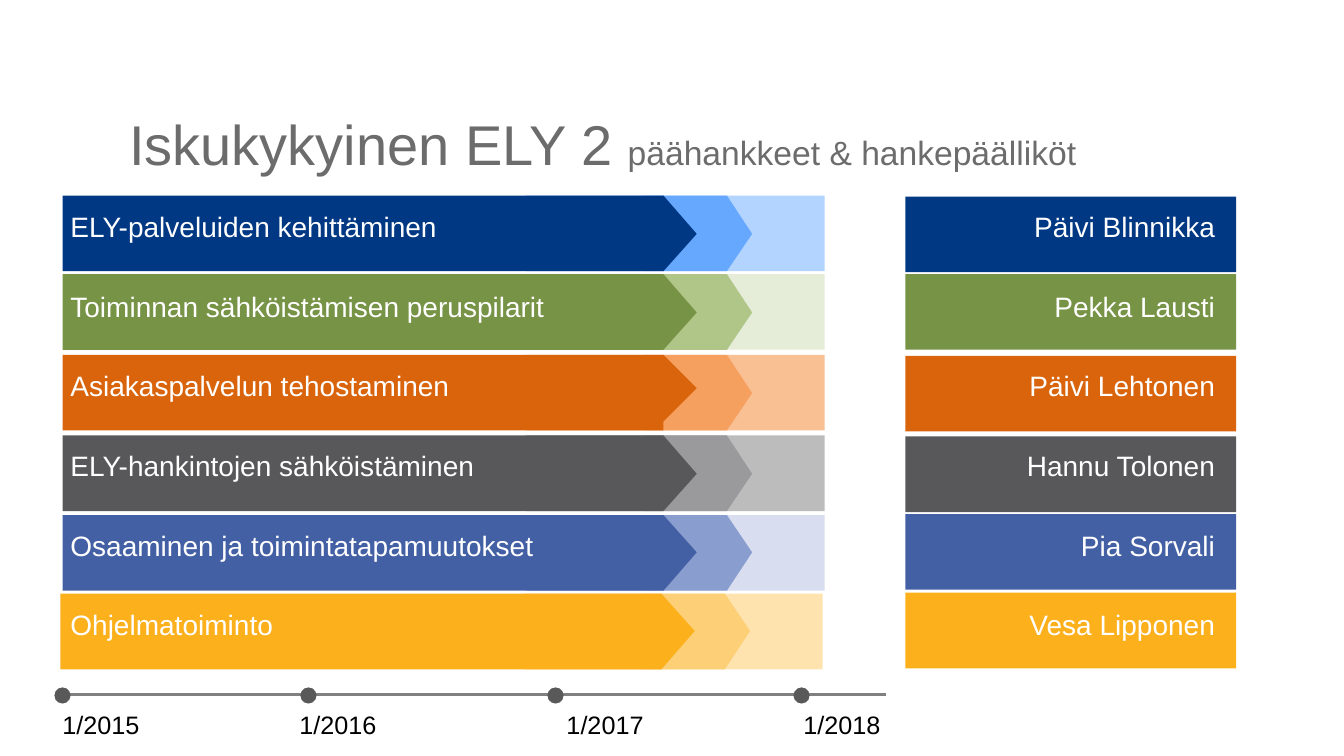
from lxml import etree
from pptx import Presentation
from pptx.dml.color import RGBColor
from pptx.enum.shapes import MSO_CONNECTOR, MSO_SHAPE
from pptx.enum.text import MSO_ANCHOR, PP_ALIGN
from pptx.oxml.ns import qn

RECT, OVAL = MSO_SHAPE.RECTANGLE, MSO_SHAPE.OVAL
STRAIGHT = MSO_CONNECTOR.STRAIGHT
LEFT, RIGHT = PP_ALIGN.LEFT, PP_ALIGN.RIGHT
BOTTOM = MSO_ANCHOR.BOTTOM

PX = 9144  # 100 px to the inch
PT = 12700
FONT = "Arial"
WHITE = RGBColor(0xFF, 0xFF, 0xFF)
BLACK = RGBColor(0, 0, 0)
TITLE_GREY = RGBColor(0x6C, 0x6C, 0x6C)
LINE_GREY = RGBColor(0x80, 0x80, 0x80)
DOT_GREY = RGBColor(0x59, 0x59, 0x59)
NAVY = [RGBColor.from_string(c) for c in ("003883", "67A8FF", "B3D4FF")]
GREEN = [RGBColor.from_string(c) for c in ("779346", "B0C688", "E5ECD7")]
ORANGE = [RGBColor.from_string(c) for c in ("D9640C", "F6A05F", "F9C094")]
GREY = [RGBColor.from_string(c) for c in ("58585A", "9A9A9D", "BCBCBD")]
BLUE = [RGBColor.from_string(c) for c in ("4460A5", "899DCE", "D8DEEF")]
YELLOW = [RGBColor.from_string(c) for c in ("FCB01C", "FDD078", "FEE3AE")]

BAR_H = 75
TEXT_TOP, TEXT_STEP = 203, 79
# project, manager, shades, bar left, bar top, arrow tip height, manager top
PROJECTS = [
    ("ELY-palveluiden kehittäminen", "Päivi Blinnikka", NAVY, 62, 194, 75, 195),
    ("Toiminnan sähköistämisen peruspilarit", "Pekka Lausti", GREEN, 62, 272, 75, 272),
    ("Asiakaspalvelun tehostaminen", "Päivi Lehtonen", ORANGE, 62, 352, 66, 353),
    ("ELY-hankintojen sähköistäminen", "Hannu Tolonen", GREY, 62, 432, 75, 433),
    ("Osaaminen ja toimintatapamuutokset", "Pia Sorvali", BLUE, 62, 511, 75, 510),
    ("Ohjelmatoiminto", "Vesa Lipponen", YELLOW, 60, 589, 75, 588),
]
DATES = ["1/2015", "1/2016", "1/2017", "1/2018"]
DATE_TABS = [235, 500, 735]


def px(*lengths):
    return [round(n * PX) for n in lengths]


def paint(sp, color):
    sp.shadow.inherit = False
    sp.fill.solid()
    sp.fill.fore_color.rgb = color
    sp.line.fill.background()


def add_block(slide, kind, box, color):
    sp = slide.shapes.add_shape(kind, *px(*box))
    paint(sp, color)


def add_run(p, text, size, color):
    r = p.add_run()
    r.text = text
    style = {"name": FONT, "size": size * PT, "bold": False}
    for key, value in style.items():
        setattr(r.font, key, value)
    r.font.color.rgb = color


def add_text(slide, box, text, size, color, align=LEFT, tabs=()):
    tf = slide.shapes.add_textbox(*px(*box)).text_frame
    tf.word_wrap = True
    p = tf.paragraphs[0]
    p.alignment = align
    if tabs:
        tab_list = etree.SubElement(p._p.get_or_add_pPr(), qn("a:tabLst"))
        for pos in px(*tabs):
            etree.SubElement(tab_list, qn("a:tab"), pos=str(pos), algn="l")
    add_run(p, text, size, color)


def add_arrow(slide, x, y, shoulder, tip, tip_h, color):
    """Draw a bar from x that ends in a point tip_h high, running from shoulder to tip."""
    points = [(shoulder, y), (tip, y + tip_h / 2), (shoulder, y + tip_h),
              (shoulder, y + BAR_H), (x, y + BAR_H)]
    builder = slide.shapes.build_freeform(x, y, scale=PX)
    builder.add_line_segments(points, close=True)
    paint(builder.convert_to_shape(), color)


def add_project(slide, x, y, text_y, label, shades, tip_h):
    dark, middle, pale = shades
    add_block(slide, RECT, (x + 577, y, 179, BAR_H), pale)
    add_arrow(slide, x + 460, y, x + 659, x + 684, BAR_H, middle)
    add_arrow(slide, x, y, x + 596, x + 629, tip_h, dark)
    add_text(slide, (60, text_y, 560, 44), label, 20, WHITE)


def add_manager(slide, x, y, text_y, name, color):
    add_block(slide, RECT, (x, y, 328, BAR_H), color)
    add_text(slide, (x + 33, text_y, 284, 44), name, 20, WHITE, RIGHT)


def add_title(slide, box):
    title = slide.shapes.title
    for key, value in zip(("left", "top", "width", "height"), px(*box)):
        setattr(title, key, value)
    tf = title.text_frame
    frame = {"word_wrap": True, "vertical_anchor": BOTTOM, "margin_left": 8 * PX,
             "margin_top": 0, "margin_bottom": 0}
    for key, value in frame.items():
        setattr(tf, key, value)
    p = tf.paragraphs[0]
    p.alignment = LEFT
    add_run(p, "Iskukykyinen ELY 2 ", 40, TITLE_GREY)
    add_run(p, "päähankkeet & hankepäälliköt", 24, TITLE_GREY)


def add_timeline(slide, x, y, width):
    axis = slide.shapes.add_connector(STRAIGHT, *px(x, y, x + width, y))
    axis.line.color.rgb = LINE_GREY
    axis.line.width = round(2.25 * PT)
    etree.SubElement(axis._element.spPr, qn("a:effectLst"))
    add_text(slide, (x - 8, y + 10, 832, 40), "\t".join(DATES), 18, BLACK,
             tabs=DATE_TABS)
    for i in range(len(DATES)):
        add_block(slide, OVAL, (x - 6 + round(i * 244.4), y - 7, 16, 16), DOT_GREY)


def main():
    prs = Presentation()
    prs.slide_width, prs.slide_height = px(1333, 750)
    slide = prs.slides.add_slide(prs.slide_layouts[5])
    add_title(slide, (120, 105, 1051, 70))
    for i, (label, name, shades, x, y, tip_h, name_y) in enumerate(PROJECTS):
        text_y = TEXT_TOP + i * TEXT_STEP
        add_project(slide, x, y, text_y, label, shades, tip_h)
        add_manager(slide, 898, name_y, text_y, name, shades[0])
    add_timeline(slide, 60, 689, 819)
    prs.save("out.pptx")


if __name__ == "__main__":
    main()
